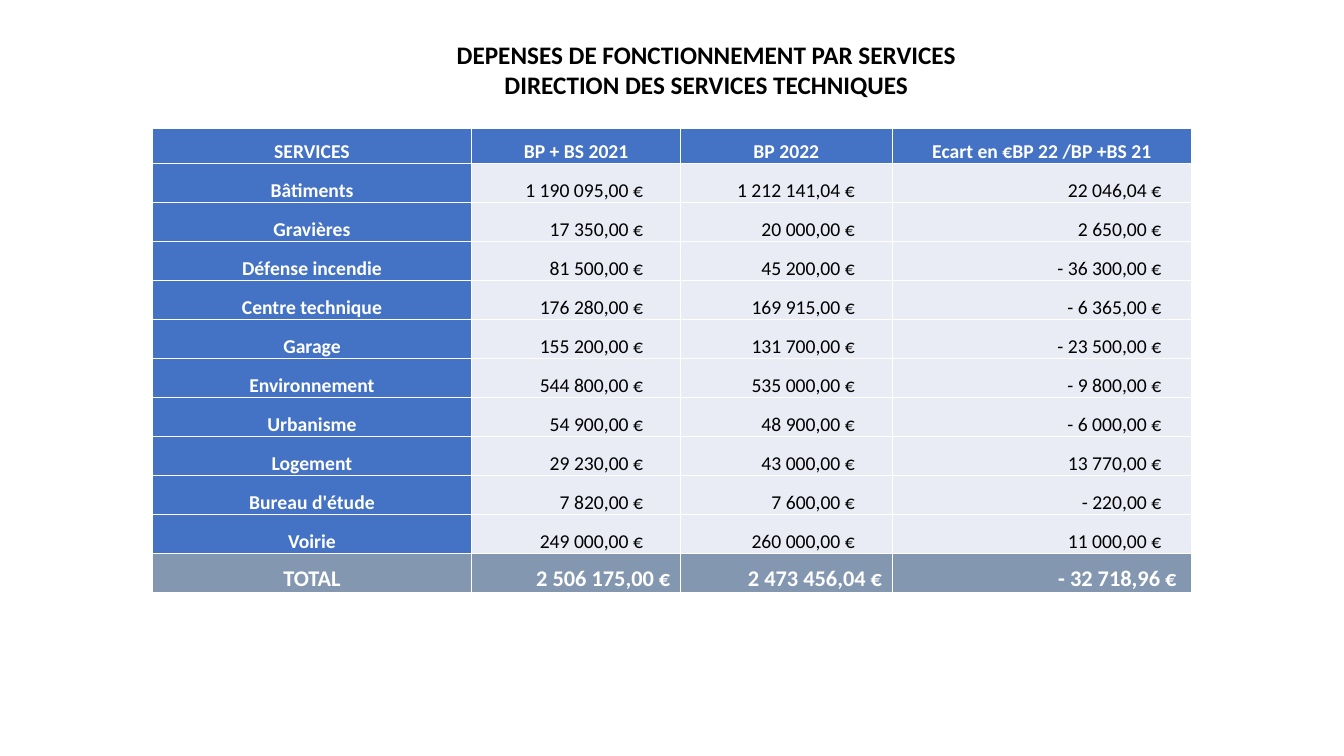
from dataclasses import dataclass

from lxml.etree import SubElement
from pptx import Presentation
from pptx.dml.color import RGBColor
from pptx.enum.text import MSO_ANCHOR, MSO_AUTO_SIZE, PP_ALIGN
from pptx.oxml.ns import qn
from pptx.util import Inches, Pt


@dataclass(frozen=True)
class Theme:
    font: str = "Calibri"
    title_size: int = 18
    body_size: int = 14
    total_size: int = 16
    black: str = "000000"
    white: str = "FFFFFF"
    blue: str = "4472C4"
    pale: str = "E9EBF5"
    slate: str = "8497B0"


THEME = Theme()
TITLE = ["DEPENSES DE FONCTIONNEMENT PAR SERVICES", "DIRECTION DES SERVICES TECHNIQUES"]
HEADINGS = ["SERVICES", "BP + BS 2021", "BP 2022", "Ecart en €BP 22 /BP +BS 21"]
BUDGETS = [
    ("Bâtiments", 1190095, 1212141.04),
    ("Gravières", 17350, 20000),
    ("Défense incendie", 81500, 45200),
    ("Centre technique", 176280, 169915),
    ("Garage", 155200, 131700),
    ("Environnement", 544800, 535000),
    ("Urbanisme", 54900, 48900),
    ("Logement", 29230, 43000),
    ("Bureau d'étude", 7820, 7600),
    ("Voirie", 249000, 260000),
]
COLUMN_WIDTHS = [3.17, 2.07, 2.1, 2.97]
AMOUNT_INSETS = [0.37, 0.37, 0.3]
TOTAL_INSETS = [0.1, 0.1, 0.15]


def euros(amount):
    digits = f"{abs(amount):,.2f}".replace(".", ";").replace(",", " ").replace(";", ",")
    return f"{'- ' if amount < 0 else ''}{digits} €"


def budget_row(service, budget_2021, budget_2022):
    return [service, *map(euros, (budget_2021, budget_2022, budget_2022 - budget_2021))]


def style_text(paragraph, size, color, bold, align):
    paragraph.alignment = align
    paragraph.font.name = THEME.font
    paragraph.font.size = Pt(size)
    paragraph.font.bold = bold
    paragraph.font.color.rgb = RGBColor.from_string(color)


def fill_cell(cell, text, fill, color=THEME.white, size=THEME.body_size, bold=True, inset=None):
    cell.text = text
    cell.vertical_anchor = MSO_ANCHOR.BOTTOM
    cell.margin_left = cell.margin_top = Inches(0.01)
    cell.margin_right = Inches(inset or 0.01)
    cell.margin_bottom = 0
    align = PP_ALIGN.RIGHT if inset else PP_ALIGN.CENTER
    style_text(cell.text_frame.paragraphs[0], size, color, bold, align)
    properties = cell._tc.get_or_add_tcPr()
    for side in ("a:lnL", "a:lnR", "a:lnT", "a:lnB"):
        border = SubElement(properties, qn(side), w=str(Pt(1)))
        SubElement(SubElement(border, qn("a:solidFill")), qn("a:srgbClr"), val=THEME.white)
    cell.fill.solid()
    cell.fill.fore_color.rgb = RGBColor.from_string(fill)


def add_grid(slide, row_count, left, top, width, height):
    frame = slide.shapes.add_table(
        row_count, len(COLUMN_WIDTHS), Inches(left), Inches(top), Inches(width), Inches(height)
    )
    grid = frame.table
    for column, column_width in zip(grid.columns, COLUMN_WIDTHS):
        column.width = Inches(column_width)
    return grid


def add_title(slide, left, top, width, height):
    title = slide.shapes.add_textbox(Inches(left), Inches(top), Inches(width), Inches(height))
    frame = title.text_frame
    frame.word_wrap = True
    frame.auto_size = MSO_AUTO_SIZE.SHAPE_TO_FIT_TEXT
    frame.text = "\n".join(TITLE)
    for paragraph in frame.paragraphs:
        style_text(paragraph, THEME.title_size, THEME.black, True, PP_ALIGN.CENTER)


def add_headings(slide, left, top, width, height):
    headings = add_grid(slide, 1, left, top, width, height)
    for column, heading in enumerate(HEADINGS):
        fill_cell(headings.cell(0, column), heading, THEME.blue)


def add_budgets(slide, left, top, width, height):
    budgets = add_grid(slide, len(BUDGETS) + 1, left, top, width, height)
    for row, budget in enumerate(BUDGETS):
        service, *amounts = budget_row(*budget)
        fill_cell(budgets.cell(row, 0), service, THEME.blue)
        for column, (amount, inset) in enumerate(zip(amounts, AMOUNT_INSETS), 1):
            fill_cell(budgets.cell(row, column), amount, THEME.pale, THEME.black, bold=False, inset=inset)

    totals = (sum(budget[year] for budget in BUDGETS) for year in (1, 2))
    total_row = zip(budget_row("TOTAL", *totals), [None, *TOTAL_INSETS])
    for column, (text, inset) in enumerate(total_row):
        fill_cell(budgets.cell(len(BUDGETS), column), text, THEME.slate, size=THEME.total_size, inset=inset)


def main():
    presentation = Presentation()
    presentation.slide_width = Inches(13.33)
    presentation.slide_height = Inches(7.5)
    slide = presentation.slides.add_slide(presentation.slide_layouts[6])
    table_left, table_width = 1.51, sum(COLUMN_WIDTHS)
    add_budgets(slide, table_left, 1.62, table_width, 4.26)
    add_headings(slide, table_left, 1.27, table_width, 0.35)
    add_title(slide, 2.68, 0.34, 8.65, 0.71)
    presentation.save("out.pptx")


if __name__ == "__main__":
    main()
